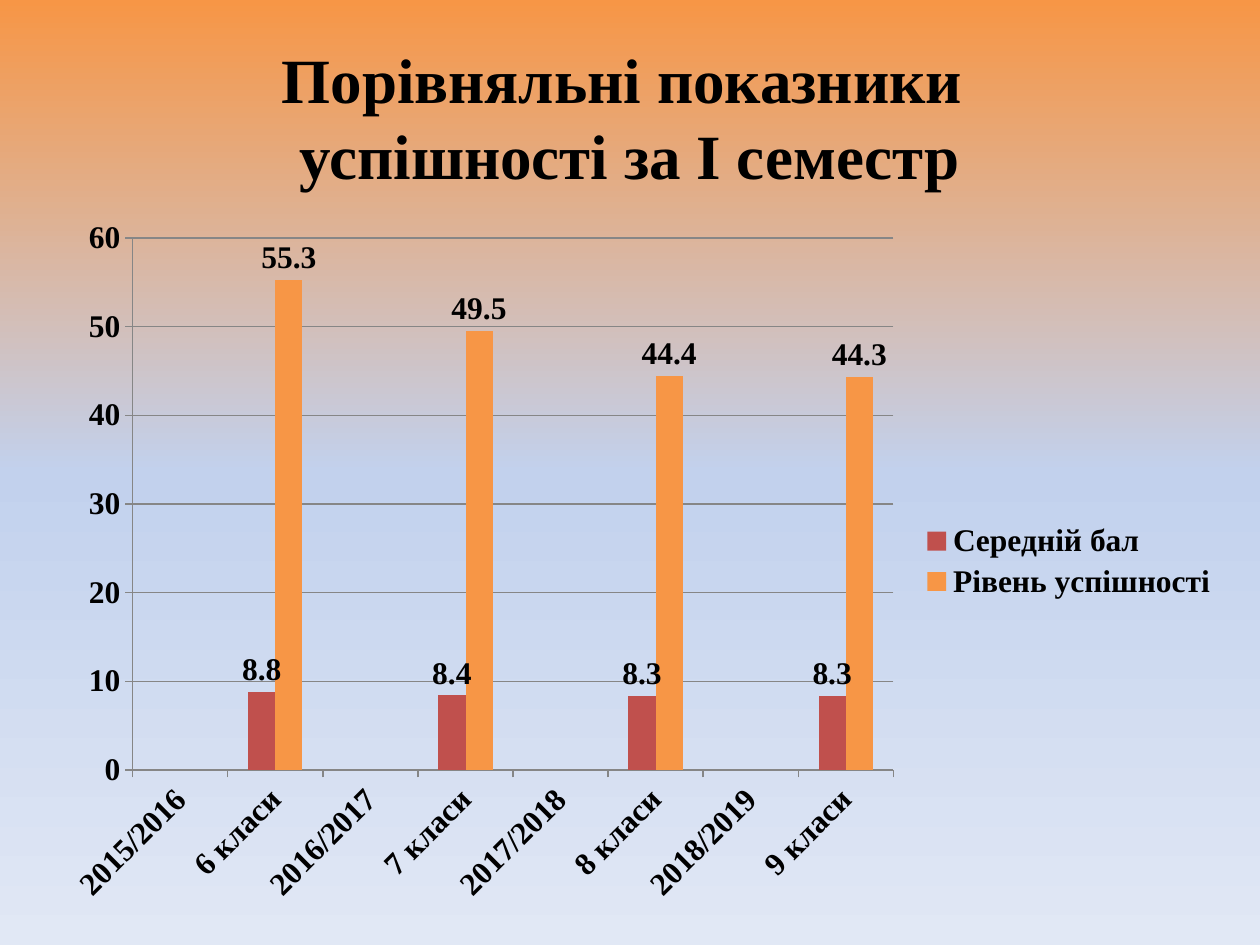
import copy

import pptx
import pptx.chart.data
import pptx.dml.color
import pptx.enum.chart
import pptx.enum.text
import pptx.util

Inches, Pt = pptx.util.Inches, pptx.util.Pt
FONT = "Times New Roman"
COLORS = {"text": "000000", "average": "C0504D", "level": "F79646", "grid": "868686"}
BACKGROUND = [(0, "F79646"), (0.5, "C2D1ED"), (1, "E1E8F5")]

TITLE = "Порівняльні показники \vуспішності за І семестр"
# School year, class, average mark, success level
RESULTS = [
    ("2015/2016", "6 класи", 8.8, 55.3),
    ("2016/2017", "7 класи", 8.4, 49.5),
    ("2017/2018", "8 класи", 8.3, 44.4),
    ("2018/2019", "9 класи", 8.3, 44.3),
]
SERIES = [("Середній бал", "average"), ("Рівень успішності", "level")]


def rgb(name):
    return pptx.dml.color.RGBColor.from_string(COLORS.get(name, name))


def style_font(font, size):
    font.name, font.size, font.bold = FONT, Pt(size), True
    font.color.rgb = rgb("text")


def fill_background(slide):
    fill = slide.background.fill
    fill.gradient()
    fill.gradient_angle = 270
    stop_list = fill._fill._gradFill.gsLst
    stop_list.insert(1, copy.deepcopy(stop_list[0]))
    for stop, (position, color) in zip(fill.gradient_stops, BACKGROUND):
        stop.position = position
        stop.color.rgb = rgb(color)


def add_title(slide):
    title = slide.shapes.title
    title.left, title.top = Inches(0.5), Inches(0.3)
    title.width, title.height = Inches(9), Inches(1.25)
    tf = title.text_frame
    tf.text = TITLE
    tf.vertical_anchor = pptx.enum.text.MSO_ANCHOR.MIDDLE
    p = tf.paragraphs[0]
    p.alignment = pptx.enum.text.PP_ALIGN.CENTER
    for r in p.runs:
        style_font(r.font, 36)


def add_results_chart(slide):
    data = pptx.chart.data.CategoryChartData()
    data.categories = [label for row in RESULTS for label in row[:2]]
    for i, (name, _) in enumerate(SERIES):
        # Year categories only separate the classes, so they hold no value
        data.add_series(name, [v for row in RESULTS for v in (None, row[2 + i])])

    chart = slide.shapes.add_chart(
        pptx.enum.chart.XL_CHART_TYPE.COLUMN_CLUSTERED,
        Inches(0.39), Inches(1.64), Inches(9.38), Inches(5.63), data).chart
    chart.has_title = False
    style_font(chart.font, 18)

    chart.has_legend = True
    chart.legend.position = pptx.enum.chart.XL_LEGEND_POSITION.RIGHT
    chart.legend.include_in_layout = False
    style_font(chart.legend.font, 18)

    for axis in (chart.category_axis, chart.value_axis):
        axis.major_tick_mark = pptx.enum.chart.XL_TICK_MARK.OUTSIDE
        style_font(axis.tick_labels.font, 18)
        axis.format.line.color.rgb = rgb("grid")
    chart.category_axis._element.txPr.bodyPr.set("rot", "-2700000")
    chart.value_axis.minimum_scale = 0
    chart.value_axis.maximum_scale = 60
    chart.value_axis.major_unit = 10
    chart.value_axis.major_gridlines.format.line.color.rgb = rgb("grid")

    plot = chart.plots[0]
    plot.gap_width, plot.overlap = 150, 0
    plot.vary_by_categories = False
    for series, (_, color) in zip(plot.series, SERIES):
        series.format.fill.solid()
        series.format.fill.fore_color.rgb = rgb(color)
        labels = series.data_labels
        labels.show_value = True
        labels.position = pptx.enum.chart.XL_LABEL_POSITION.OUTSIDE_END
        style_font(labels.font, 18)


def main():
    prs = pptx.Presentation()
    prs.slide_width, prs.slide_height = Inches(10), Inches(7.5)
    slide = prs.slides.add_slide(prs.slide_layouts[5])
    fill_background(slide)
    add_title(slide)
    add_results_chart(slide)
    prs.save("out.pptx")


if __name__ == "__main__":
    main()
